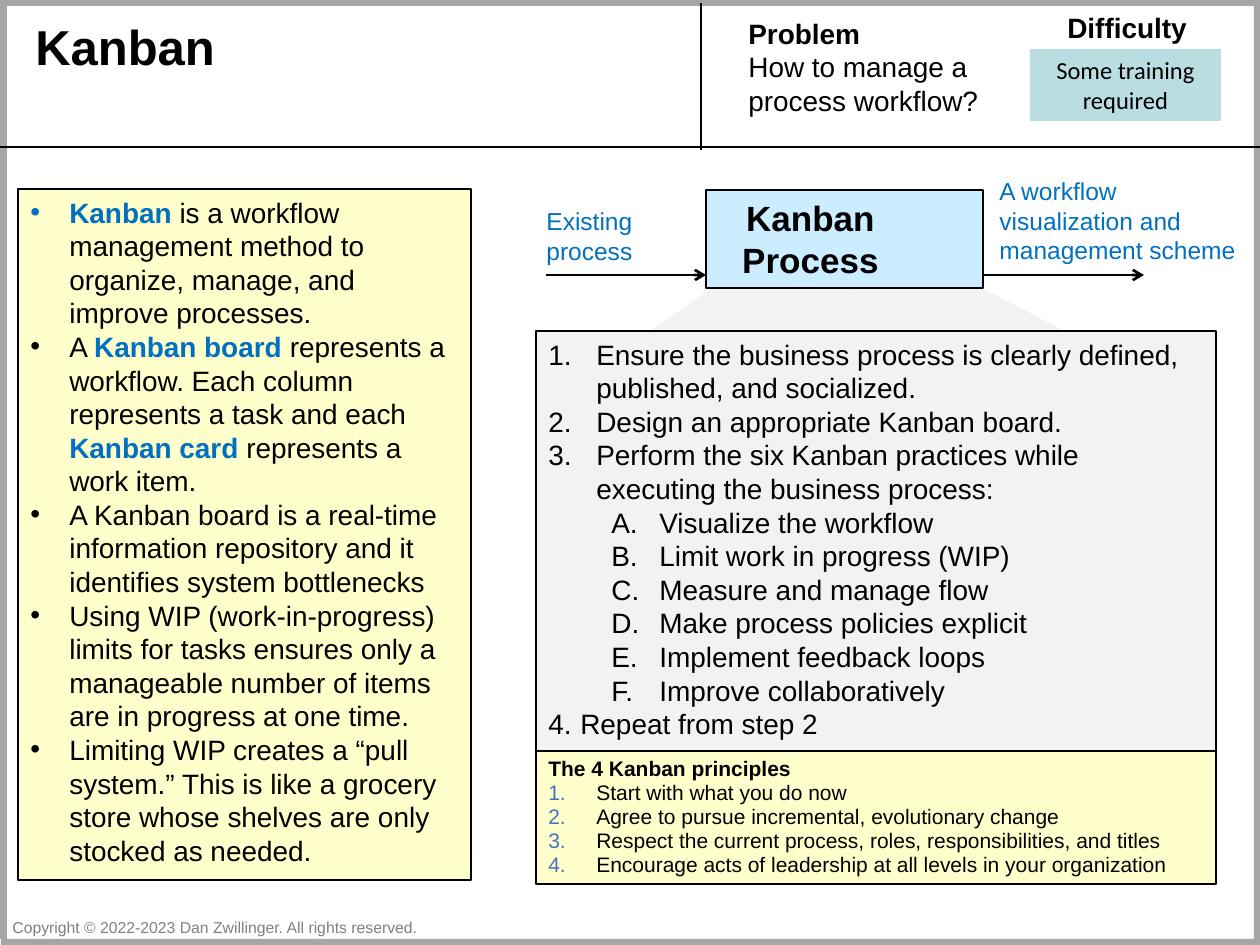
from lxml.etree import SubElement
from pptx import Presentation
from pptx.dml.color import RGBColor
from pptx.enum.shapes import MSO_CONNECTOR, MSO_SHAPE
from pptx.enum.text import MSO_ANCHOR, PP_ALIGN
from pptx.oxml.ns import qn
from pptx.util import Pt

PX = 914400 / 126  # EMU per px
COLORS = {"black": "000000", "blue": "0070C0", "bar": "A6A6A6", "gray": "F2F2F2",
          "cream": "FFFFCC", "sky": "CCECFF", "teal": "BADDE1", "note": "808080",
          "number": "4472C4"}
FRAME = {"word_wrap": True, "vertical_anchor": MSO_ANCHOR.TOP}


def add_box(place, fill=None, line=0, kind=MSO_SHAPE.RECTANGLE):
    """Add a filled shape, or a text box when there is no fill."""
    place = [round(n * PX) for n in place]
    if not fill:
        return slide.shapes.add_textbox(*place)
    box = slide.shapes.add_shape(kind, *place)
    box.shadow.inherit = False
    box.fill.solid()
    box.fill.fore_color.rgb = RGBColor.from_string(COLORS[fill])
    if line:
        box.line.color.rgb = RGBColor.from_string(COLORS["black"])
        box.line.width = Pt(line)
    else:
        box.line.fill.background()
    return box


def add_text(box, items, size, color="black", bold=False, font="Arial", wrap=True,
             align=PP_ALIGN.LEFT, space=None):
    """Write paragraphs; an item is (text, list style), and *text* is a bold blue term."""
    frame = box.text_frame
    for name, value in {**FRAME, "word_wrap": wrap}.items():
        setattr(frame, name, value)
    for i, (text, style) in enumerate(items):
        para = frame.paragraphs[0] if i == 0 else frame.add_paragraph()
        para.alignment = align
        if space:
            para.line_spacing = space
        props = para._p.get_or_add_pPr()
        for name in ("marL", "indent", "marR"):
            if name in style:
                props.set(name, str(round(style[name] * PX)))
        if "tint" in style:
            tint = SubElement(props, qn("a:buClr"))
            SubElement(tint, qn("a:srgbClr"), val=COLORS[style["tint"]])
        if "mark" in style:
            SubElement(props, qn("a:buFont"), typeface="Arial")
            SubElement(props, qn("a:buChar"), char=style["mark"])
        if "auto" in style:
            SubElement(props, qn("a:buFont"), typeface="+mj-lt")
            SubElement(props, qn("a:buAutoNum"), type=style["auto"],
                       startAt=str(style.get("start", 1)))
        if "level" in style:
            para.level = style["level"]
        for j, part in enumerate(text.split("*")):
            if not part:
                continue
            term = j % 2 == 1
            run = para.add_run()
            run.text = part
            for name, value in {"name": font, "size": Pt(size), "bold": bold or term}.items():
                setattr(run.font, name, value)
            run.font.color.rgb = RGBColor.from_string(COLORS["blue" if term else color])


deck = Presentation()
deck.slide_width, deck.slide_height = round(1260 * PX), round(945 * PX)
slide = deck.slides.add_slide(deck.slide_layouts[6])

# Frame around the slide
for place in ((0, 0, 1260, 6), (1, 939, 1259, 6), (0, 6, 7, 933), (1254, 6, 6, 933)):
    add_box(place, "bar")

# Wedge that links the process to its steps
wedge = add_box((536, 208, 680, 202), "gray", kind=MSO_SHAPE.ISOSCELES_TRIANGLE)
wedge.adjustments[0] = 0.43

# Header
add_text(add_box((23, 10, 607, 72)), [("Kanban", {})], 28, bold=True)
problem = add_box((736, 10, 273, 115))
add_text(problem, [("Problem", {}), ("How to manage a process workflow?", {})], 16)
problem.text_frame.paragraphs[0].runs[0].font.bold = True
add_text(add_box((1055, 4, 145, 47)), [("Difficulty", {})], 16, bold=True, wrap=False)
add_text(add_box((1030, 49, 191, 72), "teal"), [("Some training required", {})], 14,
         font="Calibri", align=PP_ALIGN.CENTER)

# Steps
STEP = {"marL": 48, "indent": -48, "auto": "arabicPeriod"}
PART = {"marL": 111, "indent": -48, "auto": "alphaUcPeriod", "level": 1}
LAST = {"marL": 32, "indent": -32, "auto": "arabicPeriod", "start": 4}
steps = ["Ensure the business process is clearly defined, published, and socialized.",
         "Design an appropriate Kanban board.",
         "Perform the six Kanban practices while executing the business process:"]
parts = ["Visualize the workflow", "Limit work in progress (WIP)",
         "Measure and manage flow", "Make process policies explicit",
         "Implement feedback loops", "Improve collaboratively"]
add_text(add_box((536, 331, 680, 420), "gray", 1),
         [(t, STEP) for t in steps] + [(t, PART) for t in parts]
         + [("Repeat from step 2", LAST)], 16)

# Process with its input and output
add_text(add_box((706, 190, 277, 98), "sky", 0.75),
         [("Kanban", {"marR": 68}), ("Process", {})], 20, bold=True, align=PP_ALIGN.CENTER)
add_text(add_box((534, 200, 180, 72)), [("Existing process", {})], 14, "blue")
add_text(add_box((987, 170, 272, 102)),
         [("A workflow visualization and management scheme", {})], 14, "blue")

# Header rules and flow arrows
for ends, width, arrow in (((0, 147, 1260, 147), 0.75, False),
                           ((701, 150, 701, 3), 0.75, False),
                           ((546, 275, 706, 275), 1.5, True),
                           ((983, 275, 1144, 275), 1.5, True)):
    rule = slide.shapes.add_connector(MSO_CONNECTOR.STRAIGHT, *[round(n * PX) for n in ends])
    rule.line.color.rgb = RGBColor.from_string(COLORS["black"])
    rule.line.width = Pt(width)
    if arrow:
        SubElement(rule.line._get_or_add_ln(), qn("a:tailEnd"), type="arrow")
    SubElement(rule._element.spPr, qn("a:effectLst"))

# Definitions
DOT = {"marL": 39, "indent": -39, "mark": "•"}
facts = ["*Kanban* is a workflow management method to organize, manage, and improve processes.",
         "A *Kanban board *represents a workflow. Each column represents a task and each "
         "*Kanban card *represents a work item.",
         "A Kanban board is a real-time information repository and it identifies system "
         "bottlenecks",
         "Using WIP (work-in-progress) limits for tasks ensures only a manageable number of "
         "items are in progress at one time.",
         "Limiting WIP creates a “pull system.” This is like a grocery store whose shelves "
         "are only stocked as needed."]
add_text(add_box((18, 189, 453, 691), "cream", 0.75), [(t, DOT) for t in facts], 16)

# Principles
rules = ["Start with what you do now", "Agree to pursue incremental, evolutionary change",
         "Respect the current process, roles, responsibilities, and titles",
         "Encourage acts of leadership at all levels in your organization"]
creed = add_box((536, 751, 680, 133), "cream", 0.75)
add_text(creed, [("The 4 Kanban principles", {})]
         + [(t, {**STEP, "tint": "number"}) for t in rules], 12, space=0.95)
creed.text_frame.paragraphs[0].runs[0].font.bold = True

# Footer
add_text(add_box((0, 912, 436, 32)),
         [("Copyright © 2022-2023 Dan Zwillinger. All rights reserved.", {})], 9, "note",
         wrap=False)

deck.save("out.pptx")
